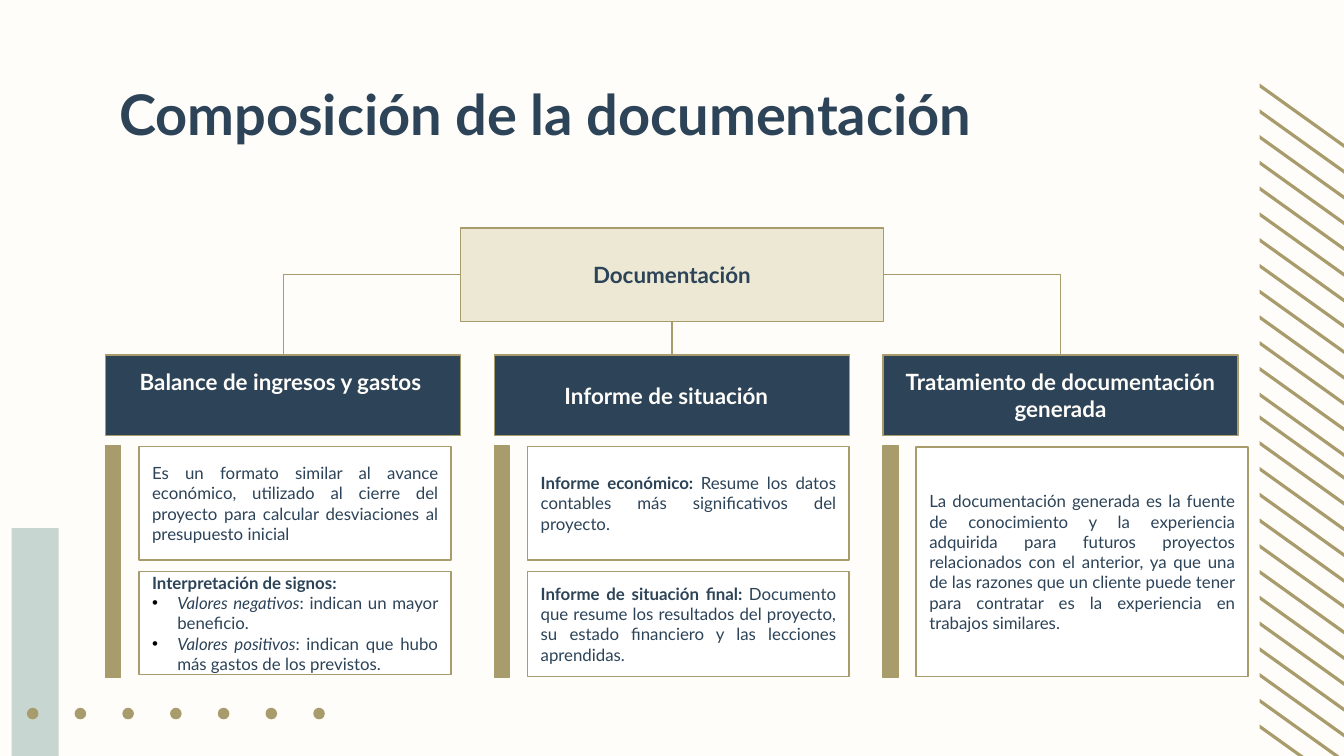
from lxml.etree import SubElement
from pptx import Presentation
from pptx.dml.color import RGBColor
from pptx.enum.shapes import MSO_CONNECTOR as Link, MSO_SHAPE as Shape
from pptx.enum.text import MSO_ANCHOR as Anchor, PP_ALIGN as Align
from pptx.oxml.ns import qn
from pptx.util import Pt

COLORS = {"paper": "FFFDFA", "navy": "2C4358", "gold": "A89C6C", "cream": "ECE8D4",
          "white": "FFFFFF", "mint": "C7D6D1", "black": "000000"}
FONT = "Lato"
LINE = 0.75
HEADER_HEIGHT = 43
PAD = (7.2, 1.5, 7.2, 1.5)

BRANCHES = [
    {"title": "Balance de ingresos y gastos", "pad": (7.2, 1.5, 10, 15.9), "width": 167.3,
     "cards": [
         (0.4, 60.8, [{"text": "Es un formato similar al avance económico, utilizado al cierre del "
                               "proyecto para calcular desviaciones al presupuesto inicial"}]),
         (67.4, 55.2, [
             {"text": "Interpretación de signos:", "bold": True},
             {"lead": "Valores negativos", "lead_italic": True, "bullet": True,
              "text": ": indican un mayor beneficio."},
             {"lead": "Valores positivos", "lead_italic": True, "bullet": True,
              "text": ": indican que hubo más gastos de los previstos."}])]},
    {"title": "Informe de situación", "pad": (7.2, 1.5, 13, 1.5), "width": 172.3,
     "cards": [
         (0.4, 60.8, [{"lead": "Informe económico: ", "lead_bold": True,
                       "text": "Resume los datos contables más significativos del proyecto."}]),
         (67.4, 56.2, [{"lead": "Informe de situación final: ", "lead_bold": True,
                        "text": "Documento que resume los resultados del proyecto, su estado "
                                "financiero y las lecciones aprendidas."}])]},
    {"title": "Tratamiento de documentación generada", "pad": PAD, "width": 177.8,
     "cards": [
         (0.7, 123, [{"text": "La documentación generada es la fuente de conocimiento y la "
                              "experiencia adquirida para futuros proyectos relacionados con el "
                              "anterior, ya que una de las razones que un cliente puede tener para "
                              "contratar es la experiencia en trabajos similares."}])]},
]


def color(name):
    return RGBColor.from_string(COLORS[name])


def add_bullet(para):
    props = para._p.get_or_add_pPr()
    props.set("marL", str(Pt(13.5)))
    props.set("indent", str(-Pt(13.5)))
    tint = SubElement(SubElement(props, qn("a:buClr")), qn("a:srgbClr"))
    tint.set("val", COLORS["black"])
    SubElement(props, qn("a:buFont")).set("typeface", "Arial")
    SubElement(props, qn("a:buChar")).set("char", "•")


def write(para, text, *, size=9, ink="navy", bold=False, italic=False, align=Align.JUSTIFY,
          lead="", lead_bold=False, lead_italic=False, bullet=False):
    para.alignment = align
    if bullet:
        add_bullet(para)
    for words, heavy, slanted in ((lead, lead_bold, lead_italic), (text, bold, italic)):
        if words:
            span = para.add_run()
            span.text = words
            span.font.name = FONT
            span.font.size = Pt(size)
            span.font.color.rgb = color(ink)
            span.font.bold = heavy
            span.font.italic = slanted


def set_frame(shape, pad, anchor):
    frame = shape.text_frame
    frame.word_wrap = True
    frame.vertical_anchor = anchor
    frame.margin_left, frame.margin_top, frame.margin_right, frame.margin_bottom = map(Pt, pad)
    return frame


def paint(shape, fill, line=None):
    shape.shadow.inherit = False
    shape.fill.solid()
    shape.fill.fore_color.rgb = color(fill)
    if line:
        shape.line.color.rgb = color(line)
        shape.line.width = Pt(LINE)
    else:
        shape.line.fill.background()


def add_box(page, box, fill, line=None, kind=Shape.RECTANGLE):
    shape = page.shapes.add_shape(kind, *map(Pt, box))
    paint(shape, fill, line)
    return shape


def add_heading(page, box, text, fill, ink="navy", pad=PAD):
    shape = add_box(page, box, fill, "gold")
    frame = set_frame(shape, pad, Anchor.MIDDLE)
    write(frame.paragraphs[0], text, size=12, ink=ink, bold=True, align=Align.CENTER)


def add_link(page, start, end):
    bent = start[0] != end[0]
    kind = Link.ELBOW if bent else Link.STRAIGHT
    link = page.shapes.add_connector(kind, *map(Pt, (*start, *end)))
    link.line.color.rgb = color("gold")
    link.line.width = Pt(LINE)
    props = link.element.spPr
    SubElement(props, qn("a:effectLst"))
    if bent:
        props.find(qn("a:prstGeom")).set("prst", "bentConnector2")


def add_stripes(page, box):
    left, top, width, height = box
    drop, thick, count = 38, 2.1, 13
    for half in range(2):
        for row in range(count):
            y = top + half * height / 2 + row * 13.8
            points = [(left, y), (left + width, y + drop),
                      (left + width, y + drop + thick), (left, y + thick)]
            corners = [(Pt(px), Pt(py)) for px, py in points]
            outline = page.shapes.build_freeform(*corners[0])
            outline.add_line_segments(corners[1:], close=True)
            paint(outline.convert_to_shape(), "gold")


def add_dots(page, box):
    left, top, width, size = box
    count = 7
    step = (width - size) / (count - 1)
    for index in range(count):
        add_box(page, (left + index * step, top, size, size), "gold", kind=Shape.OVAL)


def add_title(page, box):
    shape = page.shapes.add_textbox(*map(Pt, box))
    frame = set_frame(shape, (7.2, 7.2, 7.2, 7.2), Anchor.TOP)
    write(frame.paragraphs[0], "Composición de la documentación",
          size=30, bold=True, align=Align.LEFT)


def add_branch(page, box, branch):
    left, top, width, height = box
    add_heading(page, (left, top, width, HEADER_HEIGHT), branch["title"],
                "navy", "paper", branch["pad"])
    body = top + 48.6
    add_box(page, (left, body, 8, top + height - body), "gold", "gold")
    for offset, card_height, lines in branch["cards"]:
        card = add_box(page, (left + 17.7, body + offset, branch["width"], card_height),
                       "white", "gold")
        frame = set_frame(card, PAD, Anchor.MIDDLE)
        for index, line in enumerate(lines):
            para = frame.add_paragraph() if index else frame.paragraphs[0]
            write(para, **line)


def add_tree(page, box):
    left, top, width, height = box
    branch_width, root_width, root_height, branch_top = 190.2, 226.8, 50.2, top + 68
    middle = left + width / 2
    root_left = middle - root_width / 2
    add_heading(page, (root_left, top, root_width, root_height), "Documentación", "cream")
    step = (width - branch_width) / (len(BRANCHES) - 1)
    side = top + root_height / 2 - 0.3
    starts = [(root_left, side), (middle, top + root_height), (root_left + root_width, side)]
    for index, (branch, start) in enumerate(zip(BRANCHES, starts)):
        x = left + index * step
        add_link(page, start, (x + branch_width / 2, branch_top))
        add_branch(page, (x, branch_top, branch_width, top + height - branch_top), branch)


def main():
    deck = Presentation()
    deck.slide_width, deck.slide_height = Pt(720), Pt(405)
    page = deck.slides.add_slide(deck.slide_layouts[6])
    page.background.fill.solid()
    page.background.fill.fore_color.rgb = color("paper")
    add_stripes(page, (674.8, 44.7, 53, 355.6))
    add_box(page, (6.2, 283, 25.2, 122), "mint")
    add_dots(page, (14.4, 379.2, 159.6, 6.2))
    add_title(page, (56.7, 35.4, 607, 45.4))
    add_tree(page, (56.7, 122.2, 606.6, 240.8))
    deck.save("out.pptx")


if __name__ == "__main__":
    main()
